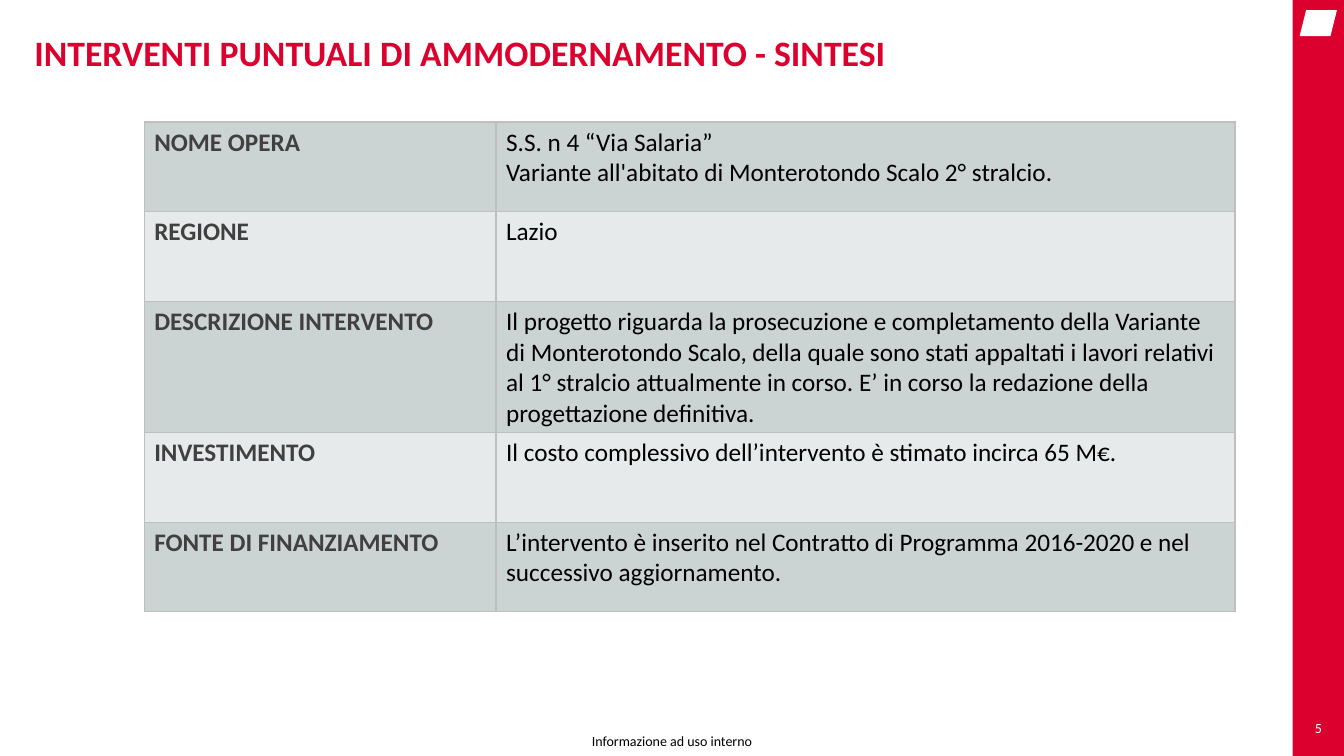
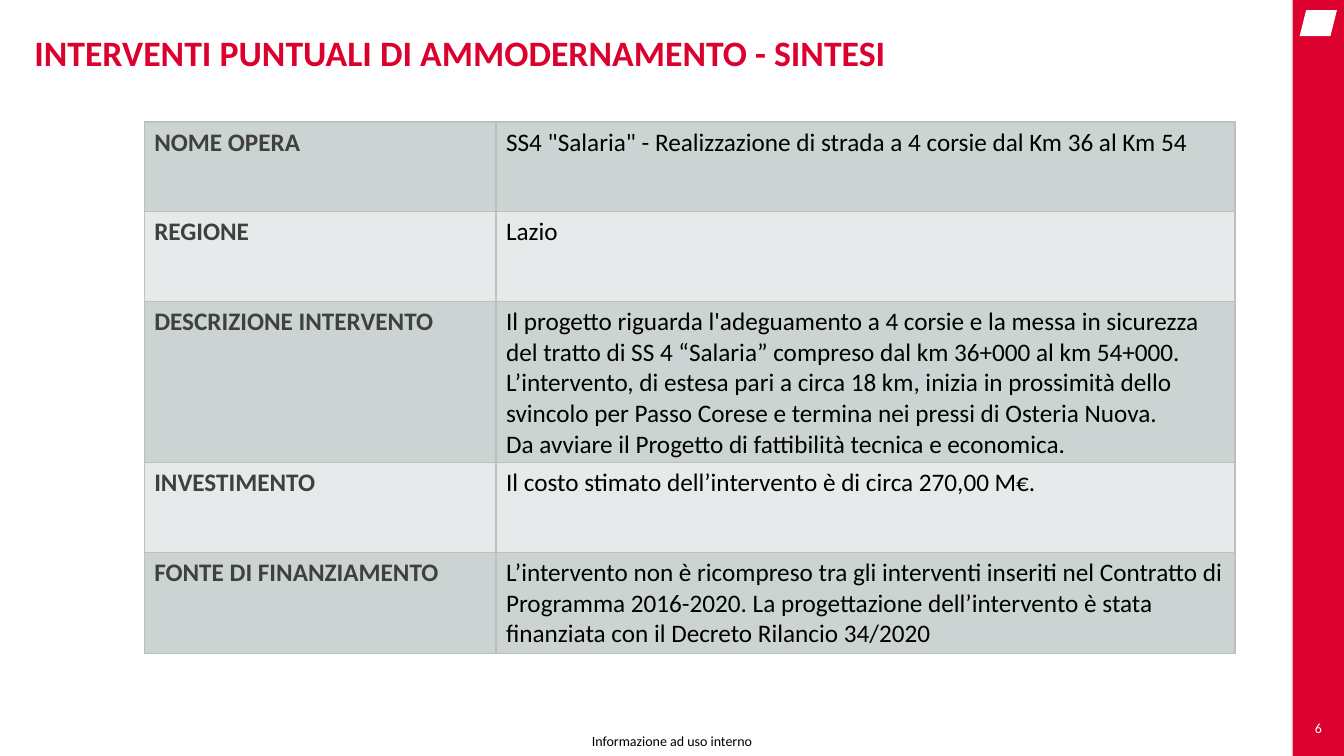
from dataclasses import dataclass

from lxml.etree import SubElement
from pptx import Presentation
from pptx.dml.color import RGBColor
from pptx.enum.shapes import MSO_SHAPE
from pptx.enum.text import MSO_ANCHOR, MSO_AUTO_SIZE, PP_ALIGN
from pptx.oxml.ns import qn
from pptx.util import Inches, Pt


@dataclass(frozen=True)
class Theme:
    font: str = "Calibri"
    red: str = "DC002E"
    white: str = "FFFFFF"
    black: str = "000000"
    label: str = "404040"
    border: str = "BFBFBF"
    row_fills: tuple = ("CCD3D3", "E7EAEA")
    title_size: float = 25.5
    table_size: float = 18
    small_size: float = 10


theme = Theme()


def style_text(frame, size, color, bold=False, align=PP_ALIGN.LEFT):
    for paragraph in frame.paragraphs:
        paragraph.alignment = align
        for run in paragraph.runs:
            run.font.name = theme.font
            run.font.size = Pt(size)
            run.font.bold = bold
            run.font.color.rgb = RGBColor.from_string(color)


def add_border(cell):
    properties = cell._tc.get_or_add_tcPr()
    for side in ("a:lnL", "a:lnR", "a:lnT", "a:lnB"):
        line = SubElement(properties, qn(side), w=str(Pt(1)))
        fill = SubElement(line, qn("a:solidFill"))
        SubElement(fill, qn("a:srgbClr"), val=theme.border)


heading = "INTERVENTI PUNTUALI DI AMMODERNAMENTO - SINTESI"
confidentiality = "Informazione ad uso interno"
first_page = 5
row_labels = ["NOME OPERA", "REGIONE", "DESCRIZIONE INTERVENTO", "INVESTIMENTO", "FONTE DI FINANZIAMENTO"]
column_widths = [3.49, 7.33]
row_height = 0.89
projects = [
    [
        "S.S. n 4 “Via Salaria”\nVariante all'abitato di Monterotondo Scalo 2° stralcio.",
        "Lazio",
        "Il progetto riguarda la prosecuzione e completamento della Variante di Monterotondo Scalo, "
        "della quale sono stati appaltati i lavori relativi al 1° stralcio attualmente in corso. "
        "E’ in corso la redazione della progettazione definitiva.",
        "Il costo complessivo dell’intervento è stimato incirca 65 M€.",
        "L’intervento è inserito nel Contratto di Programma 2016-2020 e nel successivo aggiornamento.",
    ],
    [
        "SS4 \"Salaria\" - Realizzazione di strada a 4 corsie dal Km 36 al Km 54",
        "Lazio",
        "Il progetto riguarda l'adeguamento a 4 corsie e la messa in sicurezza del tratto di SS 4 "
        "“Salaria” compreso dal km 36+000 al km 54+000. L’intervento, di estesa pari a circa 18 km, "
        "inizia in prossimità dello svincolo per Passo Corese e termina nei pressi di Osteria Nuova.\n"
        "Da avviare il Progetto di fattibilità tecnica e economica.",
        "Il costo stimato dell’intervento è di circa 270,00 M€.",
        "L’intervento non è ricompreso tra gli interventi inseriti nel Contratto di Programma 2016-2020. "
        "La progettazione dell’intervento è stata finanziata con il Decreto Rilancio 34/2020",
    ],
]

prs = Presentation()
prs.slide_width = Inches(13.33)
prs.slide_height = Inches(7.5)
title_only = prs.slide_layouts[5]

for page, answers in enumerate(projects, first_page):
    slide = prs.slides.add_slide(title_only)

    for outline, box, color in (
        (MSO_SHAPE.RECTANGLE, (12.82, 0, 0.51, 7.5), theme.red),
        (MSO_SHAPE.PARALLELOGRAM, (12.89, 0.1, 0.37, 0.26), theme.white),
    ):
        band_part = slide.shapes.add_shape(outline, *map(Inches, box))
        band_part.shadow.inherit = False
        band_part.fill.solid()
        band_part.fill.fore_color.rgb = RGBColor.from_string(color)
        band_part.line.fill.background()

    for text, box, color in (
        (str(page), (12.82, 7.1, 0.51, 0.25), theme.white),
        (confidentiality, (5.7, 7.25, 1.93, 0.21), theme.black),
    ):
        frame = slide.shapes.add_textbox(*map(Inches, box)).text_frame
        frame.margin_left = frame.margin_right = frame.margin_top = frame.margin_bottom = 0
        frame.word_wrap = True
        frame.vertical_anchor = MSO_ANCHOR.MIDDLE
        frame.text = text
        style_text(frame, theme.small_size, color, align=PP_ALIGN.CENTER)

    title = slide.shapes.title
    title.left, title.top, title.width, title.height = map(Inches, (0.34, 0.3, 12.44, 0.49))
    frame = title.text_frame
    frame.text = heading
    frame.auto_size = MSO_AUTO_SIZE.NONE
    frame.vertical_anchor = MSO_ANCHOR.BOTTOM
    frame.margin_left = 0
    frame.paragraphs[0].line_spacing = 0.9
    style_text(frame, theme.title_size, theme.red, bold=True)

    summary = slide.shapes.add_table(
        len(row_labels), len(column_widths), Inches(1.43), Inches(1.21),
        Inches(sum(column_widths)), Inches(row_height * len(row_labels)),
    ).table
    summary.first_row = summary.horz_banding = False
    for column, width in zip(summary.columns, column_widths):
        column.width = Inches(width)
    for row, entry in enumerate(zip(row_labels, answers)):
        for column, text in enumerate(entry):
            cell = summary.cell(row, column)
            add_border(cell)
            cell.fill.solid()
            cell.fill.fore_color.rgb = RGBColor.from_string(theme.row_fills[row % 2])
            cell.text_frame.text = text
            is_label = column == 0
            style_text(cell.text_frame, theme.table_size, theme.label if is_label else theme.black, is_label)

prs.save("out.pptx")
